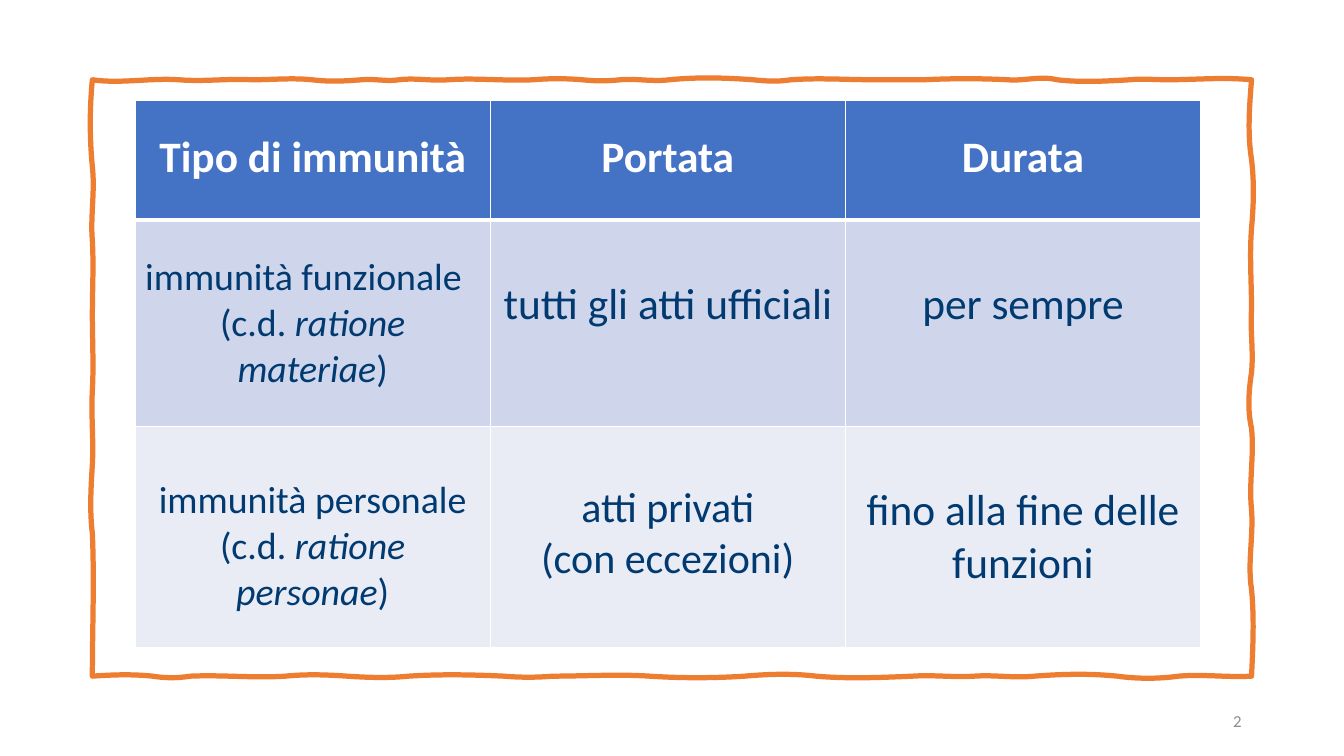
from lxml import etree
from pptx import Presentation
from pptx.dml.color import RGBColor
from pptx.enum.text import MSO_ANCHOR, PP_ALIGN
from pptx.oxml.ns import qn
from pptx.util import Pt

BLUE, NAVY, WHITE, ORANGE, GREY = "4472C4", "003A70", "FFFFFF", "ED7D31", "8C8C8C"
ROW_FILLS = [BLUE, "CFD5EA", "E9EBF5"]
ROW_HEIGHTS = [85, 147.4, 158.4]
COLUMN_WIDTH = 253.68
LEFT, TOP, RIGHT, BOTTOM = 66, 57, 894, 483

# Each wave: position of its end along the side, then its two sideways bends
BOTTOM_WAVES = [
    (109, -1, -1.5), (136, 1.5, 1.5), (204, -1, 1.5), (248, -1.5, -1),
    (292, 1, 1.5), (360, -1.5, -1), (395, 1, 1), (464, 0, -1.5),
    (532, 1.5, 1.5), (583, -1.5, -2), (652, 2, 1), (696, -1, 1),
    (739, -1, 1.5), (798, -1.5, -2), (842, 2, 2), (RIGHT, -1.5, 1),
]
RIGHT_WAVES = [
    (421, 1, 2), (364, -3, 1.5), (306, -2, 2), (266, -3, -2),
    (221, 1.5, -1), (163, 0, -1.5), (114, 1.5, 2), (TOP, -3, -1.5),
]
TOP_WAVES = [
    (834, -2, 0), (807, 0, -1), (755, 1, 2), (720, -3, 1), (660, -1, -1),
    (625, 0, 0), (565, 0, -1.5), (538, 1.5, 1), (478, -1.5, -2),
    (443, 1.5, -1), (416, 1, 1), (381, -1, -1), (320, 1, -1.5),
    (285, 1, -1.5), (258, 1.5, -1), (223, 1, 1.5), (180, -1.5, 0),
    (128, -1, 1.5), (LEFT, -1.5, 3),
]
LEFT_WAVES = [
    (119, -2, -2), (172, 2, -1.5), (225, 1, 0), (279, 0, 1),
    (332, -1, 1), (381, -1, -2), (BOTTOM, 1.5, 0),
]

L, C = PP_ALIGN.LEFT, PP_ALIGN.CENTER
# Each cell: font size, top margin, paragraphs as (alignment, runs of (text, italic))
CELLS = [
    [(31, 22, [(C, [("Tipo di immunità", False)])]),
     (31, 22, [(C, [("Portata", False)])]),
     (31, 22, [(C, [("Durata", False)])])],
    [(27, 24.6, [(L, [("immunità funzionale", False)]),
                 (C, [("(c.d. ", False), ("ratione materiae", True), (")", False)])]),
     (31, 41.4, [(C, [("tutti gli atti ufficiali", False)])]),
     (31, 41.4, [(C, [("per sempre", False)])])],
    [(27, 36.5, [(C, [("immunità personale\n(c.d. ", False),
                      ("ratione personae", True), (")", False)])]),
     (30, 40.2, [(C, [("atti privati\n(con eccezioni)", False)])]),
     (31, 41.4, [(C, [("fino alla fine delle funzioni", False)])])],
]


def rgb(color):
    return RGBColor.from_string(color)


def wavy_side(start, base, waves):
    """Return one (bend, bend, end) triple of (along, across) points per wave."""
    curves = []
    for end, bend1, bend2 in waves:
        third = (end - start) / 3
        curves.append([(start + third, base + bend1),
                       (end - third, base + bend2), (end, base)])
        start = end
    return curves


def upright(curves):
    return [[(x, y) for y, x in curve] for curve in curves]


def bend_segments(sp, curves):
    """Turn each straight segment of the outline into a cubic curve."""
    for segment, curve in zip(list(sp._element.iter(qn("a:lnTo"))), curves):
        segment.tag = qn("a:cubicBezTo")
        for i, (x, y) in enumerate(curve[:2]):
            pt = etree.Element(qn("a:pt"), x=str(Pt(x - LEFT)), y=str(Pt(y - TOP)))
            segment.insert(i, pt)


def add_frame(slide):
    curves = (wavy_side(LEFT, BOTTOM, BOTTOM_WAVES)
              + upright(wavy_side(BOTTOM, RIGHT, RIGHT_WAVES))
              + wavy_side(RIGHT, TOP, TOP_WAVES)
              + upright(wavy_side(TOP, LEFT, LEFT_WAVES)))
    builder = slide.shapes.build_freeform(Pt(LEFT), Pt(BOTTOM))
    builder.add_line_segments([(Pt(x), Pt(y)) for _, _, (x, y) in curves], close=True)
    sp = builder.convert_to_shape()
    bend_segments(sp, curves)
    sp.shadow.inherit = False
    sp.fill.background()
    sp.line.color.rgb = rgb(ORANGE)
    sp.line.width = Pt(3.75)


def add_run(p, text, color, **font_format):
    r = p.add_run()
    r.text = text
    r.font.color.rgb = rgb(color)
    for name, value in {"name": "Calibri", **font_format}.items():
        setattr(r.font, name, value)


def set_borders(cell, widths):
    tc_pr = cell._tc.get_or_add_tcPr()
    for side, width in widths.items():
        ln = etree.SubElement(tc_pr, qn(f"a:ln{side}"), w=str(Pt(width)))
        fill = etree.SubElement(ln, qn("a:solidFill"))
        etree.SubElement(fill, qn("a:srgbClr"), val=WHITE)


def fill_cell(cell, row, size, margin_top, paragraphs):
    header = row == 0
    set_borders(cell, {"L": 1, "R": 1, "T": 3 if row == 1 else 1,
                       "B": 3 if header else 1})
    cell.fill.solid()
    cell.fill.fore_color.rgb = rgb(ROW_FILLS[row])
    cell.margin_top = Pt(margin_top)
    tf = cell.text_frame
    for n, (alignment, runs) in enumerate(paragraphs):
        p = tf.add_paragraph() if n else tf.paragraphs[0]
        p.alignment = alignment
        for text, italic in runs:
            for i, line in enumerate(text.split("\n")):
                if i:
                    p.add_line_break()
                add_run(p, line, WHITE if header else NAVY,
                        size=Pt(size), bold=header, italic=italic)


def add_immunity_table(slide):
    table = slide.shapes.add_table(
        len(CELLS), len(CELLS[0]), Pt(96.5), Pt(72),
        Pt(COLUMN_WIDTH * len(CELLS[0])), Pt(sum(ROW_HEIGHTS))).table
    for column in table.columns:
        column.width = Pt(COLUMN_WIDTH)
    for row, (height, contents) in enumerate(zip(ROW_HEIGHTS, CELLS)):
        table.rows[row].height = Pt(height)
        for col, content in enumerate(contents):
            fill_cell(table.cell(row, col), row, *content)


def add_page_number(slide, number):
    tf = slide.shapes.add_textbox(Pt(678), Pt(500.5), Pt(216), Pt(28.8)).text_frame
    tf.word_wrap = True
    tf.vertical_anchor = MSO_ANCHOR.MIDDLE
    p = tf.paragraphs[0]
    p.alignment = PP_ALIGN.RIGHT
    add_run(p, number, GREY, size=Pt(12))


def main():
    prs = Presentation()
    prs.slide_width, prs.slide_height = Pt(960), Pt(540)
    slide = prs.slides.add_slide(prs.slide_layouts[6])
    add_frame(slide)
    add_page_number(slide, "2")
    add_immunity_table(slide)
    prs.save("out.pptx")


if __name__ == "__main__":
    main()
